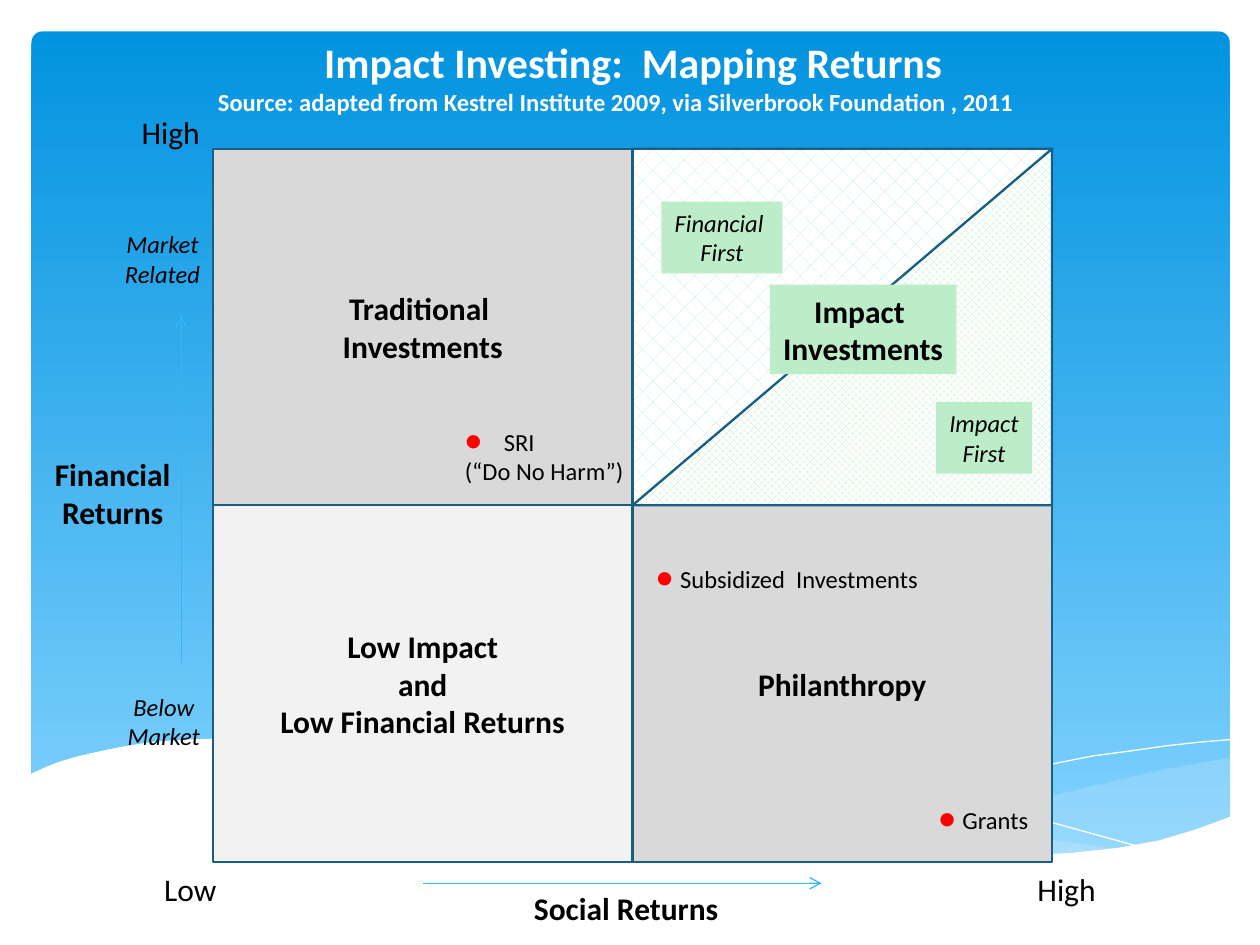
from lxml.etree import SubElement
from pptx import Presentation
from pptx.dml.color import RGBColor
from pptx.enum.dml import MSO_PATTERN
from pptx.enum.shapes import MSO_CONNECTOR, MSO_SHAPE
from pptx.enum.text import MSO_ANCHOR, MSO_AUTO_SIZE, PP_ALIGN
from pptx.oxml.ns import qn
from pptx.util import Inches, Pt

BLACK = RGBColor(0x00, 0x00, 0x00)
WHITE = RGBColor(0xFF, 0xFF, 0xFF)
RED = RGBColor(0xFF, 0x00, 0x00)
DEEP_BLUE = RGBColor(0x02, 0x93, 0xE0)
SKY_BLUE = RGBColor(0x83, 0xD3, 0xFE)
PALE_BLUE = RGBColor(0xC6, 0xE7, 0xFC)
ARROW_BLUE = RGBColor(0x31, 0xB6, 0xFD)
BORDER_BLUE = RGBColor(0x19, 0x5F, 0x84)
GREY = RGBColor(0xD9, 0xD9, 0xD9)
LIGHT_GREY = RGBColor(0xF2, 0xF2, 0xF2)
MINT = RGBColor(0xBD, 0xEC, 0xC9)

GRID_LEFT, GRID_TOP = 1.69, 1.18
CELL_WIDTH, CELL_HEIGHT = 3.33, 2.83
MIDDLE_X, MIDDLE_Y = GRID_LEFT + CELL_WIDTH, GRID_TOP + CELL_HEIGHT

RIGHT_SWELL = [
    (9.77, 6.01), (9.5, 6.06), (9.22, 6.11), (8.92, 6.18), (8.62, 6.25), (8.06, 6.39),
    (7.54, 6.5), (7.07, 6.59), (6.62, 6.67), (6.92, 6.71), (7.33, 6.76), (7.7, 6.79),
    (8.15, 6.8), (8.55, 6.78), (8.9, 6.74), (9.22, 6.67), (9.51, 6.59), (9.77, 6.49)]
LONG_SWELL = [
    (8.94, 6.75), (8.38, 6.67), (7.76, 6.56), (7.07, 6.42), (6.3, 6.24), (5.7, 6.1),
    (5.15, 6), (4.65, 5.93), (4.2, 5.89), (3.8, 5.87), (3.28, 5.89), (2.87, 5.93),
    (3.43, 6.01), (4.05, 6.13), (4.5, 6.24), (5.3, 6.42), (6.02, 6.57), (6.66, 6.68),
    (7.23, 6.76), (7.74, 6.79), (8.19, 6.8), (8.59, 6.79)]
FALLING_LINE = [
    (3.1, 5.97), (3.36, 5.93), (3.75, 5.9), (4.17, 5.89), (4.69, 5.9), (5.33, 5.96),
    (6.09, 6.06), (6.96, 6.21), (7.61, 6.35), (8.32, 6.52), (9.08, 6.73)]
RISING_LINE = [
    (6.14, 6.59), (6.53, 6.48), (6.96, 6.37), (7.49, 6.25), (8.07, 6.12), (8.67, 6),
    (8.97, 5.96), (9.25, 5.92), (9.52, 5.89), (9.76, 5.87)]
WHITE_WAVE = [
    (9.77, 6.48), (9.5, 6.58), (9.2, 6.67), (8.87, 6.73), (8.5, 6.77), (8.09, 6.79),
    (7.61, 6.77), (7.08, 6.72), (6.48, 6.64), (5.79, 6.51), (5.03, 6.35), (4.47, 6.22),
    (3.91, 6.09), (3.4, 5.99), (2.92, 5.92), (2.5, 5.88), (2.11, 5.86), (1.77, 5.86),
    (1.46, 5.87), (1.19, 5.89), (0.95, 5.93), (0.76, 5.97), (0.59, 6.01), (0.46, 6.05),
    (0.36, 6.09), (0.23, 6.15), (0.23, 7.31), (9.77, 7.31)]


class SlideBuilder:
    font = "Calibri"
    border = Pt(1.25)

    def __init__(self, slide):
        self.slide = slide
        self.shapes = slide.shapes

    def paint(self, shape, fill=None, line=None, width=None):
        shape.shadow.inherit = False
        if fill is None:
            shape.fill.background()
        else:
            shape.fill.solid()
            shape.fill.fore_color.rgb = fill
        self.outline(shape, line, width)

    def outline(self, shape, color, width=None):
        if color is None:
            shape.line.fill.background()
        else:
            shape.line.color.rgb = color
            shape.line.width = self.border if width is None else width

    def add_span(self, para, text, size, color=BLACK, bold=False, italic=False):
        span = para.add_run()
        span.text = text
        span.font.name = self.font
        span.font.size = Pt(size)
        span.font.bold = bold
        span.font.italic = italic
        span.font.color.rgb = color

    def fill_text(self, frame, lines, size, align=PP_ALIGN.CENTER, **style):
        for index, text in enumerate(lines):
            para = frame.add_paragraph() if index else frame.paragraphs[0]
            para.alignment = align
            self.add_span(para, text, size, **style)

    def backdrop(self, left, top, width, height):
        panel = self.shapes.add_shape(MSO_SHAPE.ROUNDED_RECTANGLE, Inches(left), Inches(top),
                                      Inches(width), Inches(height))
        panel.adjustments[0] = 0.013
        self.paint(panel)
        panel.fill.gradient()
        panel.fill.gradient_angle = 270
        for stop, color, position in zip(panel.fill.gradient_stops, (DEEP_BLUE, SKY_BLUE), (0, 1)):
            stop.color.rgb = color
            stop.position = position

    def curve(self, points, fill=None, opacity=100, line=None):
        scaled = [(Inches(x), Inches(y)) for x, y in points]
        builder = self.shapes.build_freeform(*scaled[0])
        builder.add_line_segments(scaled[1:], close=fill is not None)
        shape = builder.convert_to_shape()
        self.paint(shape, fill, line, 0)
        if opacity < 100:
            color = shape.fill._xPr.find(qn("a:solidFill"))[0]
            SubElement(color, qn("a:alpha")).set("val", str(opacity * 1000))

    def box(self, left, top, width, height, lines=(), size=18, fill=None, line=None, **style):
        shape = self.shapes.add_shape(MSO_SHAPE.RECTANGLE, Inches(left), Inches(top),
                                      Inches(width), Inches(height))
        self.paint(shape, fill, line)
        shape.text_frame.word_wrap = line is not None
        self.fill_text(shape.text_frame, lines, size, **style)

    def label(self, left, top, width, height, lines, size, align=PP_ALIGN.CENTER,
              bullet_indent=None, **style):
        box = self.shapes.add_textbox(Inches(left), Inches(top), Inches(width), Inches(height))
        box.text_frame.word_wrap = False
        box.text_frame.auto_size = MSO_AUTO_SIZE.SHAPE_TO_FIT_TEXT
        self.fill_text(box.text_frame, lines, size, align, **style)
        if bullet_indent:
            self.bullet(box.text_frame.paragraphs[0], bullet_indent)

    def bullet(self, para, indent):
        properties = para._p.get_or_add_pPr()
        properties.set("marL", str(Inches(indent)))
        properties.set("indent", str(-Inches(indent)))
        color = SubElement(properties, qn("a:buClr"))
        SubElement(color, qn("a:srgbClr")).set("val", str(RED))
        SubElement(properties, qn("a:buSzPct")).set("val", "200000")
        SubElement(properties, qn("a:buFont")).set("typeface", "Arial")
        SubElement(properties, qn("a:buChar")).set("char", "•")

    def half_cell(self, left, top, rotation, pattern):
        shift = (CELL_WIDTH - CELL_HEIGHT) / 2
        triangle = self.shapes.add_shape(MSO_SHAPE.RIGHT_TRIANGLE, Inches(left + shift),
                                         Inches(top - shift), Inches(CELL_HEIGHT),
                                         Inches(CELL_WIDTH))
        triangle.rotation = rotation
        self.paint(triangle, line=BORDER_BLUE)
        triangle.fill.patterned()
        triangle.fill.pattern = pattern
        triangle.fill.fore_color.rgb = MINT
        triangle.fill.back_color.rgb = WHITE

    def arrow(self, start_x, start_y, end_x, end_y):
        arrow = self.shapes.add_connector(MSO_CONNECTOR.STRAIGHT, Inches(start_x),
                                          Inches(start_y), Inches(end_x), Inches(end_y))
        self.outline(arrow, ARROW_BLUE, Pt(0.75))
        SubElement(arrow.line._get_or_add_ln(), qn("a:tailEnd")).set("type", "arrow")
        SubElement(arrow._element.spPr, qn("a:effectLst"))

    def title(self, left, top, width, height, heading, source):
        title = self.shapes.title
        title.left, title.top = Inches(left), Inches(top)
        title.width, title.height = Inches(width), Inches(height)
        frame = title.text_frame
        frame.word_wrap = False
        frame.auto_size = MSO_AUTO_SIZE.SHAPE_TO_FIT_TEXT
        frame.vertical_anchor = MSO_ANCHOR.TOP
        self.fill_text(frame, [heading], 24, color=WHITE, bold=True)
        para = frame.add_paragraph()
        para.alignment = PP_ALIGN.LEFT
        self.add_span(para, source, 14, color=WHITE, bold=True)
        self.shapes._spTree.append(title._element)


def main():
    deck = Presentation()
    deck.slide_width, deck.slide_height = Inches(10), Inches(7.5)
    page = SlideBuilder(deck.slides.add_slide(deck.slide_layouts[5]))

    page.backdrop(0.25, 0.25, 9.51, 6.6)
    page.curve(RIGHT_SWELL, PALE_BLUE, opacity=29)
    page.curve(LONG_SWELL, PALE_BLUE, opacity=40)
    page.curve(FALLING_LINE, line=WHITE)
    page.curve(RISING_LINE, line=WHITE)
    page.curve(WHITE_WAVE, WHITE)

    for left, top, fill, lines in [
        (GRID_LEFT, MIDDLE_Y, LIGHT_GREY, ["Low Impact", "and", "Low Financial Returns"]),
        (MIDDLE_X, MIDDLE_Y, GREY, ["Philanthropy"]),
        (GRID_LEFT, GRID_TOP, GREY, ["Traditional ", "Investments"]),
    ]:
        page.box(left, top, CELL_WIDTH, CELL_HEIGHT, lines, fill=fill, line=BORDER_BLUE, bold=True)

    page.half_cell(MIDDLE_X, GRID_TOP, 270, MSO_PATTERN.LARGE_CHECKER_BOARD)
    page.half_cell(MIDDLE_X, GRID_TOP, 90, MSO_PATTERN.DIAGONAL_BRICK)
    page.box(MIDDLE_X, GRID_TOP, CELL_WIDTH, CELL_HEIGHT, line=BORDER_BLUE)
    page.box(7.43, 3.19, 0.76, 0.57, ["Impact", "First"], 14, MINT, italic=True)
    page.box(5.25, 1.6, 0.96, 0.57, ["Financial ", "First"], 14, MINT, italic=True)
    page.box(6.11, 2.26, 1.48, 0.71, ["Impact ", "Investments"], 18, MINT, bold=True)

    page.arrow(3.36, 7.01, 6.52, 7.01)
    page.arrow(1.44, 5.26, 1.44, 2.51)
    page.label(4.13, 7.01, 1.68, 0.4, ["Social Returns"], 18, bold=True)
    page.label(0.33, 3.56, 1.13, 0.71, ["Financial", "Returns"], 18, bold=True)
    page.label(0.91, 5.44, 0.78, 0.57, ["Below", "Market"], 14, italic=True)
    page.label(0.89, 1.77, 0.8, 0.57, ["Market", "Related"], 14, italic=True)
    for left, top, width, text in [
        (1.19, 6.86, 0.64, "Low"), (8.13, 6.86, 0.67, "High"), (1.02, 0.85, 0.67, "High"),
    ]:
        page.label(left, top, width, 0.4, [text], 18)

    for left, top, width, height, indent, lines in [
        (5.11, 4.43, 2.3, 0.34, 0.19, ["Subsidized  Investments"]),
        (7.35, 6.34, 0.92, 0.34, 0.19, ["Grants"]),
        (3.59, 3.34, 1.51, 0.57, 0.31, ["SRI", "(“Do No Harm”)"]),
    ]:
        page.label(left, top, width, height, lines, 14, PP_ALIGN.LEFT, indent)

    page.title(1.63, 0.24, 6.79, 0.74, "Impact Investing:  Mapping Returns",
               "Source: adapted from Kestrel Institute 2009, via Silverbrook Foundation , 2011")
    deck.save("out.pptx")


if __name__ == "__main__":
    main()
